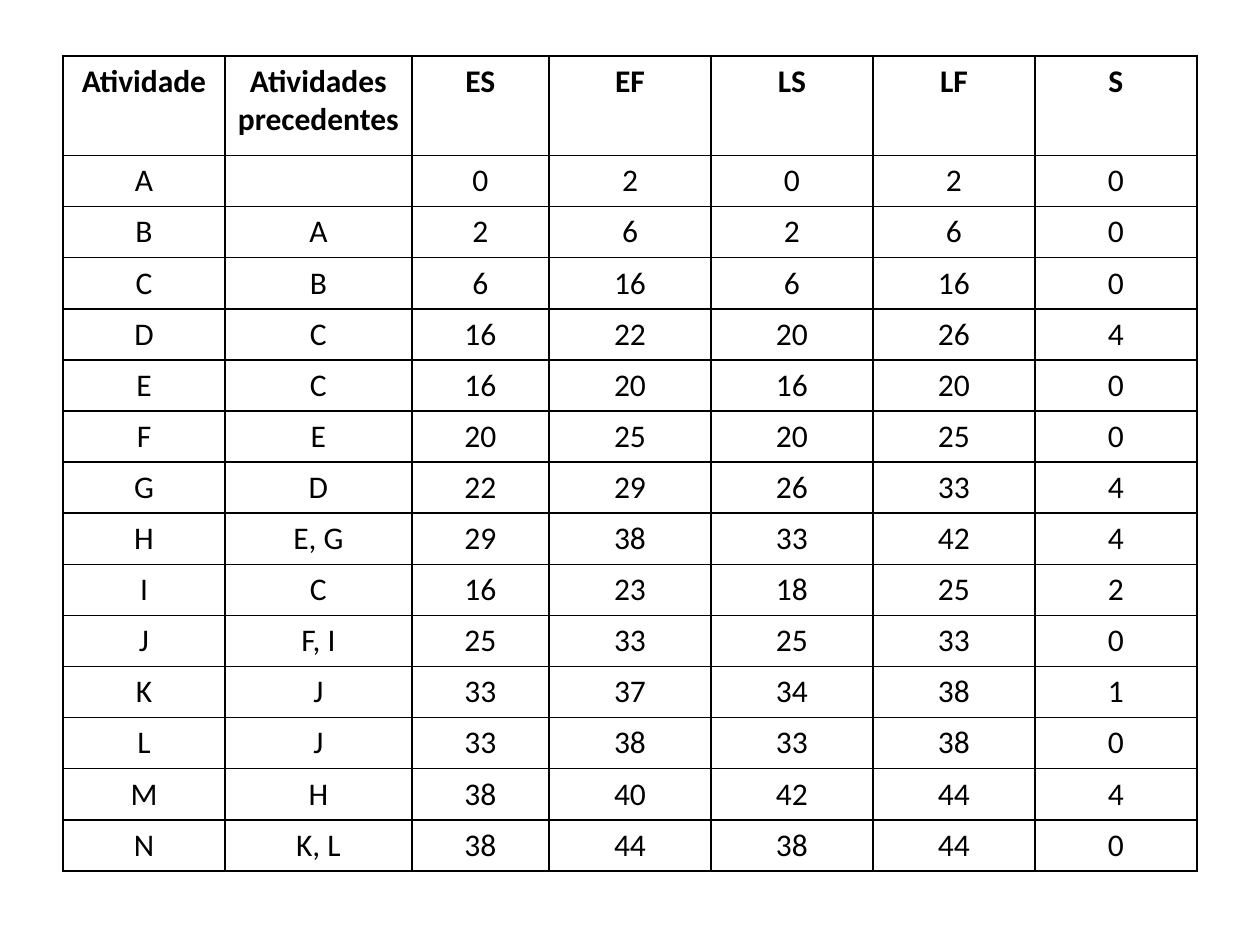
from lxml import etree
from pptx import Presentation
from pptx.dml.color import RGBColor
from pptx.enum.text import PP_ALIGN
from pptx.oxml.ns import qn
from pptx.util import Pt

CENTER = PP_ALIGN.CENTER
BLANK_LAYOUT = 6
FONT, FONT_SIZE = "Calibri", 18
BLACK, WHITE = "000000", "FFFFFF"

HEADER = ("Atividade", "Atividades precedentes", "ES", "EF", "LS", "LF", "S")
ACTIVITIES = [
    ("A", "", 0, 2, 0, 2, 0),
    ("B", "A", 2, 6, 2, 6, 0),
    ("C", "B", 6, 16, 6, 16, 0),
    ("D", "C", 16, 22, 20, 26, 4),
    ("E", "C", 16, 20, 16, 20, 0),
    ("F", "E", 20, 25, 20, 25, 0),
    ("G", "D", 22, 29, 26, 33, 4),
    ("H", "E, G", 29, 38, 33, 42, 4),
    ("I", "C", 16, 23, 18, 25, 2),
    ("J", "F, I", 25, 33, 25, 33, 0),
    ("K", "J", 33, 37, 34, 38, 1),
    ("L", "J", 33, 38, 33, 38, 0),
    ("M", "H", 38, 40, 42, 44, 4),
    ("N", "K, L", 38, 44, 38, 44, 0),
]

LEFT, TOP = 36, 32
COLUMN_WIDTHS = [92.56, 106.8, 78.4] + [92.56] * 4
ROW_HEIGHTS = [56.9] + [29.2] * len(ACTIVITIES)


def color(hex_string):
    return RGBColor.from_string(hex_string)


def add_borders(cell, hex_string, width):
    """Draw a solid line on all four sides; borders must precede the fill."""
    properties = cell._tc.get_or_add_tcPr()
    for index, side in enumerate(("a:lnL", "a:lnR", "a:lnT", "a:lnB")):
        line = etree.Element(qn(side), w=str(Pt(width)))
        fill = etree.SubElement(line, qn("a:solidFill"))
        etree.SubElement(fill, qn("a:srgbClr"), val=hex_string)
        properties.insert(index, line)


def fill_cell(cell, value, bold):
    cell.text = str(value)
    cell.fill.solid()
    cell.fill.fore_color.rgb = color(WHITE)
    add_borders(cell, BLACK, 1)
    paragraph = cell.text_frame.paragraphs[0]
    paragraph.alignment = CENTER
    font = paragraph.font
    font.name, font.size, font.bold = FONT, Pt(FONT_SIZE), bold
    font.color.rgb = color(BLACK)


def main():
    presentation = Presentation()
    presentation.slide_width, presentation.slide_height = Pt(720), Pt(540)
    slide = presentation.slides.add_slide(presentation.slide_layouts[BLANK_LAYOUT])

    rows = [HEADER] + ACTIVITIES
    table = slide.shapes.add_table(
        len(rows), len(HEADER), Pt(LEFT), Pt(TOP),
        Pt(sum(COLUMN_WIDTHS)), Pt(sum(ROW_HEIGHTS)),
    ).table
    table.horz_banding = False
    for column, width in zip(table.columns, COLUMN_WIDTHS):
        column.width = Pt(width)
    for row, height in zip(table.rows, ROW_HEIGHTS):
        row.height = Pt(height)
    for row_index, values in enumerate(rows):
        for column_index, value in enumerate(values):
            fill_cell(table.cell(row_index, column_index), value, row_index == 0)

    presentation.save("out.pptx")


if __name__ == "__main__":
    main()
